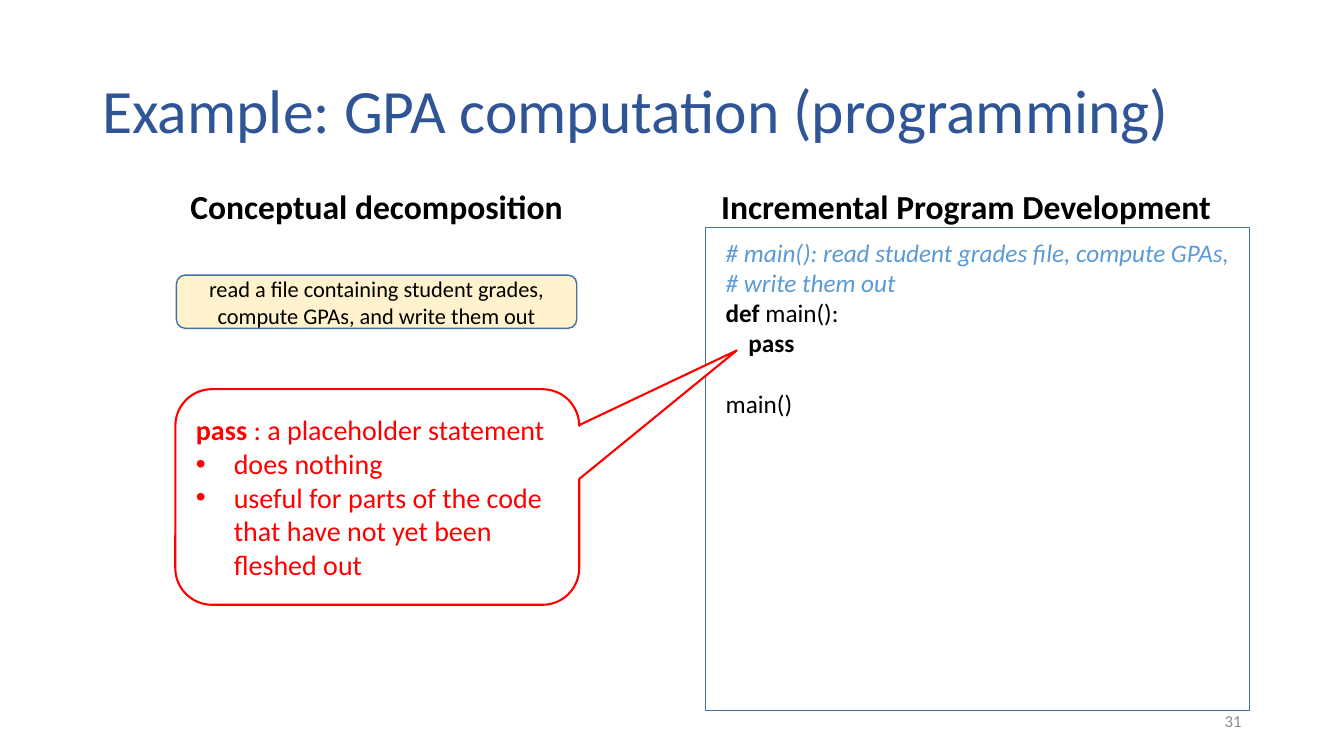
"""Build the slide on GPA computation by incremental program development."""
from lxml import etree
from pptx import Presentation
from pptx.dml.color import RGBColor
from pptx.enum import shapes, text
from pptx.oxml import ns
from pptx.util import Pt

FONT = "Calibri"
BLACK = RGBColor(0x00, 0x00, 0x00)
WHITE = RGBColor(0xFF, 0xFF, 0xFF)
TITLE_BLUE = RGBColor(0x2F, 0x55, 0x97)
COMMENT_BLUE = RGBColor(0x5B, 0x9B, 0xD5)
OUTLINE_BLUE = RGBColor(0x43, 0x73, 0x9E)
CREAM = RGBColor(0xFF, 0xF2, 0xCC)
RED = RGBColor(0xFF, 0x00, 0x00)
GREY = RGBColor(0x8C, 0x8C, 0x8C)
LEFT, CENTER, RIGHT = text.PP_ALIGN.LEFT, text.PP_ALIGN.CENTER, text.PP_ALIGN.RIGHT
TOP, MIDDLE = text.MSO_ANCHOR.TOP, text.MSO_ANCHOR.MIDDLE


def set_frame(box, anchor, margins=(7.2, 3.6, 7.2, 3.6)):
    """Wrap the text of a box, anchor it and set its margins."""
    frame = box.text_frame
    frame.word_wrap = True
    frame.vertical_anchor = anchor
    frame.margin_left, frame.margin_top, frame.margin_right, frame.margin_bottom = map(Pt, margins)


def add_para(box, spans, size, color, align=LEFT, spacing=1.0, before=0, italic=False):
    """Add a paragraph of (wording, bold) spans to a box and return it."""
    frame = box.text_frame
    para = frame.paragraphs[0]
    if para.runs:
        para = frame.add_paragraph()
    para.alignment = align
    para.line_spacing = spacing
    para.space_before = Pt(before)
    for wording, bold in spans:
        span = para.add_run()
        span.text = wording
        span.font.name = FONT
        span.font.size = Pt(size)
        span.font.bold = bold
        span.font.italic = italic
        span.font.color.rgb = color
    return para


def indent(para, left, first=0, bullet=None):
    """Indent a paragraph, with a bullet if one is given."""
    properties = para._p.get_or_add_pPr()
    properties.set("marL", str(Pt(left)))
    properties.set("indent", str(Pt(first)))
    if bullet:
        etree.SubElement(properties, ns.qn("a:buFont")).set("typeface", "Arial")
        etree.SubElement(properties, ns.qn("a:buChar")).set("char", bullet)


def add_label(page, place, wording, size, color, align=LEFT, anchor=TOP, bold=False, **spacing):
    """Add a text box with a single line of text."""
    box = page.shapes.add_textbox(*map(Pt, place))
    set_frame(box, anchor)
    add_para(box, [(wording, bold)], size, color, align, **spacing)


def add_panel(page, kind, place, line, width, fill=None):
    """Add an outlined shape, filled if a colour is given."""
    panel = page.shapes.add_shape(kind, *map(Pt, place))
    panel.shadow.inherit = False
    panel.line.color.rgb = line
    panel.line.width = Pt(width)
    if fill is None:
        panel.fill.background()
    else:
        panel.fill.solid()
        panel.fill.fore_color.rgb = fill
    return panel


def add_code(page):
    """Add the program panel."""
    code = add_panel(page, shapes.MSO_SHAPE.RECTANGLE, (504, 162, 388, 345.6), OUTLINE_BLUE, 0.25)
    set_frame(code, TOP, (14.4, 7.2, 7.2, 3.6))
    for comment in ("# main(): read student grades file, compute GPAs,", "# write them out"):
        add_para(code, [(comment, False)], 18, COMMENT_BLUE, italic=True)
    add_para(code, [("def", True), (" main():", False)], 18, BLACK)
    indent(add_para(code, [("pass", True)], 18, BLACK), 16.25)
    add_para(code, [("main()", False)], 18, BLACK, before=21.75)


def add_callout(page):
    """Add the callout that explains the pass statement."""
    callout = add_panel(page, shapes.MSO_SHAPE.ROUNDED_RECTANGULAR_CALLOUT,
                        (125.25, 278, 288.5, 154), RED, 1.5, WHITE)
    for index, value in enumerate((0.89, -0.68, 0.17)):
        callout.adjustments[index] = value
    color = callout._element.spPr.find(ns.qn("a:solidFill"))[0]
    etree.SubElement(color, ns.qn("a:alpha")).set("val", "90000")
    set_frame(callout, MIDDLE)
    add_para(callout, [("pass", True), (" : a placeholder statement", False)], 20, RED)
    for point in ("does nothing",
                  "useful for parts of the code that have not yet been fleshed out"):
        indent(add_para(callout, [(point, False)], 20, RED), 27, -27, "•")


def add_step(page):
    """Add the box that states the task."""
    step = add_panel(page, shapes.MSO_SHAPE.ROUNDED_RECTANGLE,
                     (126, 196.5, 286, 38), OUTLINE_BLUE, 1, CREAM)
    set_frame(step, MIDDLE)
    add_para(step, [("read a file containing student grades, compute GPAs, and write them out", False)],
             16, BLACK, CENTER)


def main():
    """Build and save the deck."""
    deck = Presentation()
    deck.slide_width, deck.slide_height = Pt(960), Pt(540)
    page = deck.slides.add_slide(deck.slide_layouts[6])
    add_label(page, (66, 28.75, 828, 104.4), "Example: GPA computation (programming)",
              44, TITLE_BLUE, anchor=MIDDLE, spacing=0.9)
    for left, width, heading in ((66, 406, "Conceptual decomposition"),
                                 (486, 408, "Incremental Program Development")):
        add_label(page, (left, 132.5, width, 41.75), heading, 24, BLACK, CENTER,
                  bold=True, spacing=0.9, before=10)
    add_code(page)
    add_label(page, (678, 500.5, 216, 28.75), "31", 12, GREY, RIGHT, MIDDLE)
    add_callout(page)
    add_step(page)
    deck.save("out.pptx")


if __name__ == "__main__":
    main()
